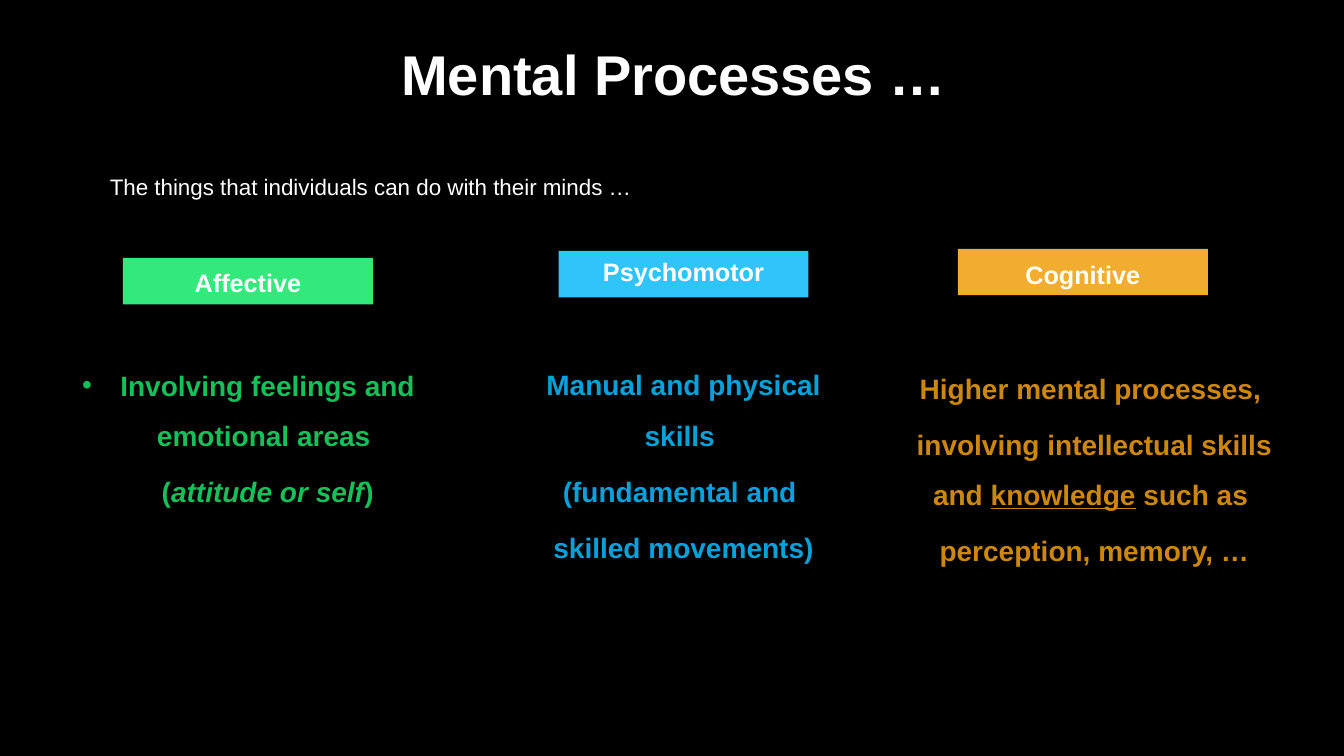
from pptx import Presentation
from pptx.dml.color import RGBColor
from pptx.enum.shapes import MSO_SHAPE
from pptx.enum.text import MSO_ANCHOR, PP_ALIGN
from pptx.oxml.ns import qn
from pptx.util import Inches, Pt
from lxml import etree

RECTANGLE = MSO_SHAPE.RECTANGLE
TOP, MIDDLE = MSO_ANCHOR.TOP, MSO_ANCHOR.MIDDLE
LEFT, CENTER = PP_ALIGN.LEFT, PP_ALIGN.CENTER

WIDTH, HEIGHT = Inches(13.33), Inches(7.5)
HANGING = Inches(0.38)
COLORS = {
    "background": "000000", "white": "FFFFFF",
    "green": "33E97C", "green_text": "15C05A",
    "blue": "2FC5FA", "blue_text": "05A2DA",
    "orange": "F2AC30", "orange_text": "CD870D",
}

TITLE_BOX = (2.63, 4.93, 94.97, 10.53)
INTRO_BOX = (7.43, 22.27, 85.22, 4.93)
HEADER_SIZE = (18.6, 6.13)

PROCESSES = [
    {
        "label": "Affective", "color": "green",
        "header": (9.15, 34.13), "label_shift": 0.01,
        "box": (5.03, 43.07, 26.93, 27.6), "bulleted": True,
        "lines": [
            [("Involving feelings and emotional areas ", {})],
            [("(", {}), ("attitude or self", {"italic": True}), (")", {})],
        ],
    },
    {
        "label": "Psychomotor", "color": "blue",
        "header": (41.56, 33.2), "label_shift": -0.03,
        "box": (39.46, 46.13, 22.81, 28.8), "bulleted": False,
        "lines": [
            [("Manual and physical skills ", {})],
            [("(fundamental and ", {})],
            [("skilled movements)", {})],
        ],
    },
    {
        "label": "Cognitive", "color": "orange",
        "header": (71.27, 32.93), "label_shift": 0.02,
        "box": (67.29, 45.2, 28.28, 31.47), "bulleted": False,
        "lines": [
            [("Higher mental processes, ", {})],
            [("involving intellectual skills and ", {}),
             ("knowledge", {"underline": True}), (" such as ", {})],
            [("perception, memory, …", {})],
        ],
    },
]


def place(box):
    left, top, width, height = box
    return (int(WIDTH * left / 100), int(HEIGHT * top / 100),
            int(WIDTH * width / 100), int(HEIGHT * height / 100))


def color_of(name):
    return RGBColor.from_string(COLORS[name])


def write(shape, lines, size, color, bold=True, align=CENTER, anchor=MIDDLE,
          line_spacing=1.0, space_before=4):
    frame = shape.text_frame
    frame.word_wrap = True
    frame.vertical_anchor = anchor
    for index, line in enumerate(lines):
        paragraph = frame.add_paragraph() if index else frame.paragraphs[0]
        paragraph.alignment = align
        paragraph.line_spacing = line_spacing
        paragraph.space_before = Pt(space_before if index else 0)
        for text, emphasis in line:
            run = paragraph.add_run()
            run.text = text
            font = run.font
            font.name, font.size, font.bold = "Arial", Pt(size), bold
            font.color.rgb = color_of(color)
            font.italic = emphasis.get("italic", False)
            font.underline = emphasis.get("underline", False)


def hang_bullet(paragraphs):
    for index, paragraph in enumerate(paragraphs):
        properties = paragraph._p.get_or_add_pPr()
        properties.set("marL", str(HANGING))
        properties.set("indent", str(0 if index else -HANGING))
        if index == 0:
            etree.SubElement(properties, qn("a:buFont")).set("typeface", "Arial")
            etree.SubElement(properties, qn("a:buChar")).set("char", "•")


def add_title(slide, box):
    title = slide.shapes.title
    title.left, title.top, title.width, title.height = place(box)
    write(title, [[("Mental Processes …", {})]], 40, "white", line_spacing=0.9)


def add_intro(slide, box):
    intro = slide.shapes.add_textbox(*place(box))
    text = "The things that individuals can do with their minds …"
    write(intro, [[(text, {})]], 16, "white", bold=False, align=LEFT, anchor=TOP)


def add_header(slide, box, label, color, label_shift):
    header = slide.shapes.add_shape(RECTANGLE, *place(box))
    header.shadow.inherit = False
    header.fill.solid()
    header.fill.fore_color.rgb = color_of(color)
    header.line.fill.background()
    frame = header.text_frame
    frame.margin_top = Inches(0.05 + label_shift)
    frame.margin_bottom = Inches(0.05 - label_shift)
    write(header, [[(label, {})]], 18, "white")


def add_description(slide, box, lines, color, bulleted):
    description = slide.shapes.add_textbox(*place(box))
    write(description, lines, 20, color, line_spacing=1.5)
    if bulleted:
        hang_bullet(description.text_frame.paragraphs)


def add_process(slide, process):
    color = process["color"]
    add_header(slide, process["header"] + HEADER_SIZE, process["label"],
               color, process["label_shift"])
    add_description(slide, process["box"], process["lines"],
                    color + "_text", process["bulleted"])


def main():
    presentation = Presentation()
    presentation.slide_width, presentation.slide_height = WIDTH, HEIGHT
    slide = presentation.slides.add_slide(presentation.slide_layouts[5])
    slide.background.fill.solid()
    slide.background.fill.fore_color.rgb = color_of("background")
    add_title(slide, TITLE_BOX)
    add_intro(slide, INTRO_BOX)
    for process in PROCESSES:
        add_process(slide, process)
    presentation.save("out.pptx")


if __name__ == "__main__":
    main()
